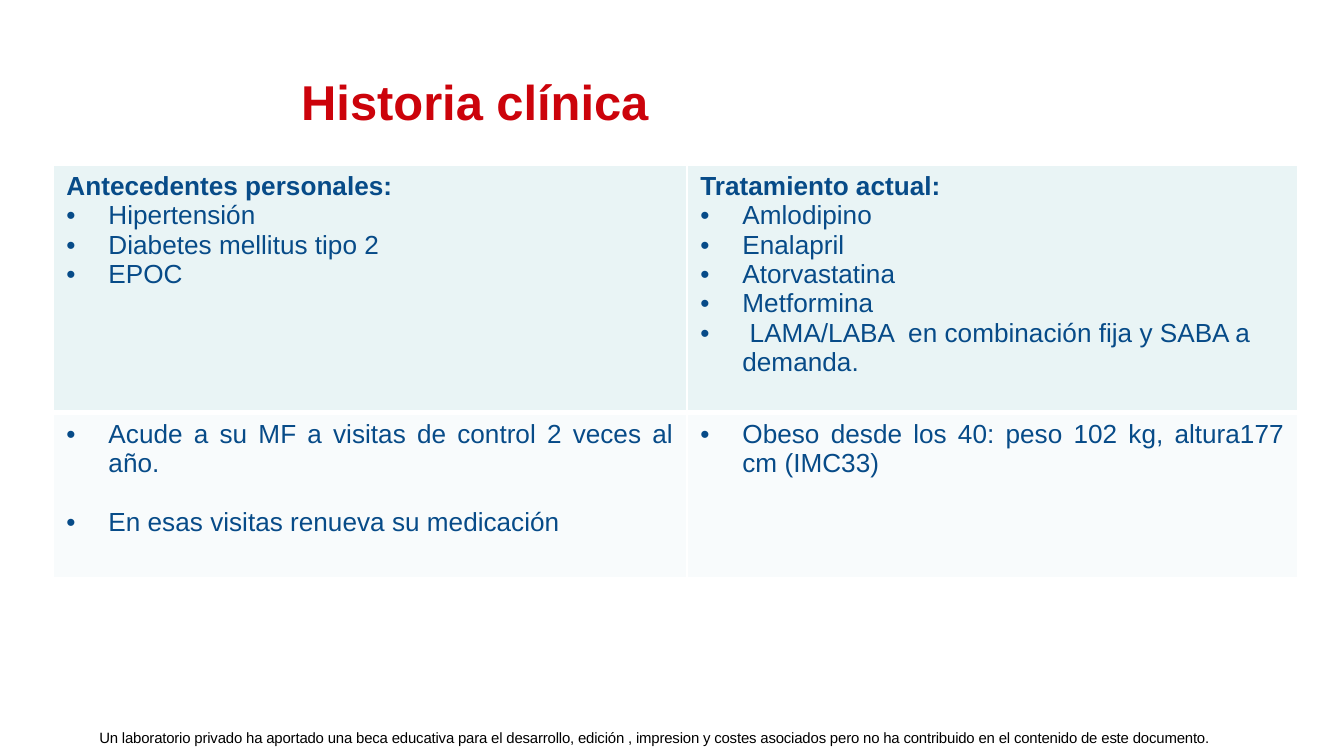
from dataclasses import dataclass

from lxml.etree import SubElement
from pptx import Presentation
from pptx.dml.color import RGBColor
from pptx.enum.text import MSO_ANCHOR, PP_ALIGN as Align
from pptx.oxml.ns import qn
from pptx.util import Emu, Pt

EMU_PER_PX = 914400 / 134.4


@dataclass(frozen=True)
class Theme:
    font: str = "Arial"
    title_color: str = "CC030B"
    body_color: str = "074B88"
    sponsor_color: str = "000000"
    border_color: str = "FFFFFF"
    row_fills: tuple = ("E9F4F5", "F8FBFC")
    title_size: float = 26.2
    body_size: float = 14
    sponsor_size: float = 8


THEME = Theme()


@dataclass(frozen=True)
class Entry:
    text: str
    heading: bool = False
    align: Align = Align.JUSTIFY
    space_before: int = 0


def px(length):
    return Emu(round(length * EMU_PER_PX))


def add_run(paragraph, text, size, color, bold=False):
    run = paragraph.add_run()
    run.text = text
    run.font.name = THEME.font
    run.font.size = Pt(size)
    run.font.bold = bold
    run.font.color.rgb = RGBColor.from_string(color)
    return run


def add_text_frame(slide, box):
    frame = slide.shapes.add_textbox(*map(px, box)).text_frame
    frame.word_wrap = True
    return frame


def add_title(slide, box, text):
    frame = add_text_frame(slide, box)
    frame.vertical_anchor = MSO_ANCHOR.MIDDLE
    add_run(frame.paragraphs[0], text, THEME.title_size, THEME.title_color, bold=True)


def add_sponsor_note(slide, box, text):
    frame = add_text_frame(slide, box)
    frame.margin_left = frame.margin_right = frame.margin_bottom = 0
    frame.margin_top = px(3)
    note = frame.paragraphs[0]
    note.alignment = Align.CENTER
    run = add_run(note, text, THEME.sponsor_size, THEME.sponsor_color)
    run.font._element.set("spc", "-10")


def add_bullet(paragraph):
    props = paragraph._p.get_or_add_pPr()
    indent = px(42)
    props.set("marL", str(indent))
    props.set("indent", str(-indent))
    SubElement(props, qn("a:buFont"), typeface=THEME.font)
    SubElement(props, qn("a:buChar"), char="•")


def set_borders(cell, widths):
    """Draw the borders of a cell; widths are points by side: L, R, T, B."""
    props = cell._tc.get_or_add_tcPr()
    for side, width in widths.items():
        line = SubElement(props, qn(f"a:ln{side}"), w=str(Pt(width)))
        fill = SubElement(line, qn("a:solidFill"))
        SubElement(fill, qn("a:srgbClr"), val=THEME.border_color)


def fill_cell(cell, entries, fill, bottom_border):
    set_borders(cell, {"L": 1, "R": 1, "T": bottom_border if fill != THEME.row_fills[0] else 1,
                       "B": bottom_border})
    cell.fill.solid()
    cell.fill.fore_color.rgb = RGBColor.from_string(fill)
    frame = cell.text_frame
    for index, entry in enumerate(entries):
        paragraph = frame.add_paragraph() if index else frame.paragraphs[0]
        paragraph.alignment = Align.LEFT if entry.heading else entry.align
        if entry.space_before:
            paragraph.space_before = Pt(entry.space_before)
        if not entry.heading:
            add_bullet(paragraph)
        add_run(paragraph, entry.text, THEME.body_size, THEME.body_color, entry.heading)


def add_history_table(slide, box, column_widths, row_heights, rows):
    table = slide.shapes.add_table(len(rows), len(column_widths), *map(px, box)).table
    table.first_row = table.horz_banding = False
    for column, width in zip(table.columns, column_widths):
        column.width = px(width)
    for row, height in zip(table.rows, row_heights):
        row.height = px(height)
    for row, contents, fill, border in zip(table.rows, rows, THEME.row_fills, (3, 1)):
        for cell, entries in zip(row.cells, contents):
            fill_cell(cell, entries, fill, border)


def build_clinical_history(slide, width, height):
    add_sponsor_note(
        slide, (61, height - 30, 1187, 30),
        "Un laboratorio privado ha aportado una beca educativa para el desarrollo, edición , "
        "impresion y costes asociados pero no ha contribuido en el contenido de este documento.")
    add_title(slide, (288, 59, width - 288, 83), "Historia clínica")

    conditions = ["Hipertensión", "Diabetes mellitus tipo 2", "EPOC"]
    drugs = ["Amlodipino", "Enalapril", "Atorvastatina", "Metformina",
             " LAMA/LABA  en combinación fija y SABA a demanda."]
    rows = [
        [[Entry("Antecedentes personales:", heading=True), *map(Entry, conditions)],
         [Entry("Tratamiento actual:", heading=True),
          *(Entry(drug, align=Align.LEFT) for drug in drugs)]],
        [[Entry("Acude a su MF a visitas de control 2 veces al año."),
          Entry("En esas visitas renueva su medicación", space_before=16)],
         [Entry("Obeso desde los 40: peso 102 kg, altura177 cm (IMC33)")]],
    ]
    columns, heights = (634, 611), (248, 165)
    add_history_table(slide, (53, 165, sum(columns), sum(heights)), columns, heights, rows)


def main():
    width, height = 1344, 756
    deck = Presentation()
    deck.slide_width, deck.slide_height = px(width), px(height)
    build_clinical_history(deck.slides.add_slide(deck.slide_layouts[6]), width, height)
    deck.save("out.pptx")


if __name__ == "__main__":
    main()
